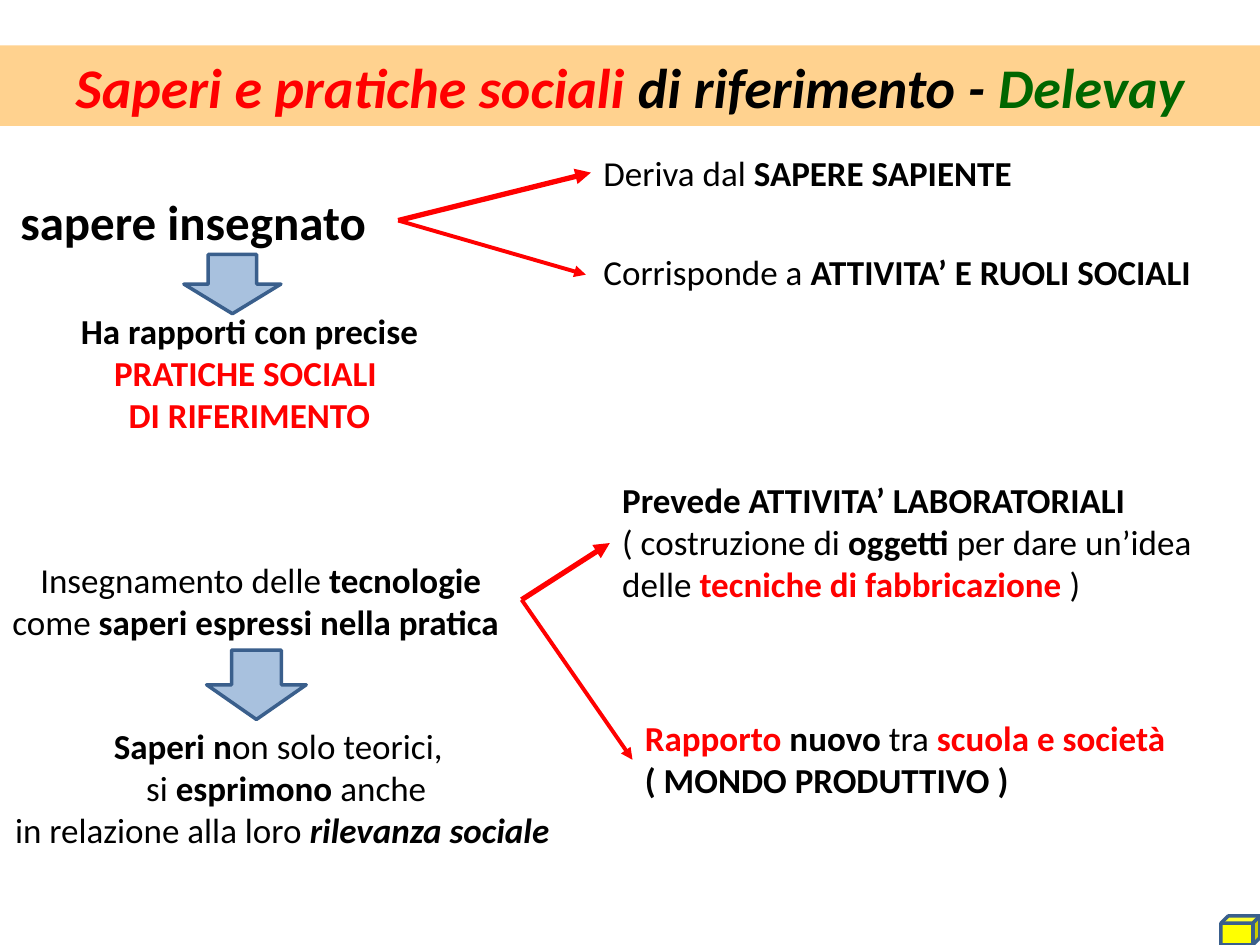
from dataclasses import dataclass

import lxml.etree
import pptx
import pptx.dml.color
import pptx.enum.shapes
import pptx.enum.text
import pptx.oxml.ns
import pptx.util

Inches = pptx.util.Inches
Pt = pptx.util.Pt
Shape = pptx.enum.shapes.MSO_SHAPE
Align = pptx.enum.text.PP_ALIGN
qn = pptx.oxml.ns.qn

FONT = "Calibri"
COLORS = {
    "black": "000000",
    "red": "FF0000",
    "green": "006600",
    "orange": "FF9900",
    "blue": "4F81BD",
    "outline": "3A5F8C",
    "yellow": "FFFF00",
}


@dataclass
class Run:
    text: str
    bold: bool = False
    color: str = "black"
    italic: bool = False
    size: float = 20


@dataclass
class Line:
    runs: list[Run]
    align: Align = Align.LEFT


@dataclass
class TextBlock:
    box: tuple[float, float, float, float]
    lines: list[Line]


@dataclass
class Arrow:
    start: tuple[float, float]
    end: tuple[float, float]
    width: float


def rgb(name: str) -> pptx.dml.color.RGBColor:
    return pptx.dml.color.RGBColor.from_string(COLORS[name])


def centered(*runs: Run) -> Line:
    return Line(list(runs), Align.CENTER)


def left(*runs: Run) -> Line:
    return Line(list(runs))


def write_lines(frame, lines: list[Line], wrap: bool) -> None:
    frame.word_wrap = wrap
    frame.auto_size = pptx.enum.text.MSO_AUTO_SIZE.SHAPE_TO_FIT_TEXT
    for index, line in enumerate(lines):
        paragraph = frame.paragraphs[0] if index == 0 else frame.add_paragraph()
        paragraph.alignment = line.align
        for item in line.runs:
            run = paragraph.add_run()
            run.text = item.text
            run.font.name = FONT
            run.font.size = Pt(item.size)
            run.font.bold = item.bold
            run.font.italic = item.italic
            run.font.color.rgb = rgb(item.color)


def add_text(slide, block: TextBlock) -> None:
    box = slide.shapes.add_textbox(*map(Inches, block.box))
    write_lines(box.text_frame, block.lines, wrap=False)


def add_filled(slide, kind: Shape, box: tuple, fill: str,
               opacity: int = 100, outlined: bool = True):
    shape = slide.shapes.add_shape(kind, *map(Inches, box))
    shape.shadow.inherit = False
    shape.fill.solid()
    shape.fill.fore_color.rgb = rgb(fill)
    if opacity < 100:
        color = shape.fill._xPr.find(qn("a:solidFill"))[0]
        lxml.etree.SubElement(color, qn("a:alpha"), val=str(opacity * 1000))
    if outlined:
        shape.line.color.rgb = rgb("outline")
        shape.line.width = Pt(2)
    else:
        shape.line.fill.background()
    return shape


def add_arrow(slide, arrow: Arrow) -> None:
    connector = slide.shapes.add_connector(
        pptx.enum.shapes.MSO_CONNECTOR.STRAIGHT,
        *map(Inches, arrow.start + arrow.end))
    connector.line.color.rgb = rgb("red")
    connector.line.width = Pt(arrow.width)
    lxml.etree.SubElement(connector.line._get_or_add_ln(), qn("a:tailEnd"), type="triangle")
    lxml.etree.SubElement(connector._element.spPr, qn("a:effectLst"))


TITLE = centered(
    Run("Saperi e pratiche sociali ", True, "red", True, 32),
    Run("di riferimento - ", True, "black", True, 32),
    Run("Delevay", True, "green", True, 32))

TEXT_BLOCKS = [
    # Taught knowledge
    TextBlock((0, 1.47, 3.16, 0.57), [
        left(Run(" "), Run("sapere insegnato", True, size=28))]),
    TextBlock((4.69, 1.15, 3.71, 0.44), [
        left(Run("Deriva dal"), Run(" SAPERE SAPIENTE", True))]),
    TextBlock((4.69, 1.94, 5.11, 0.44), [
        left(Run("Corrisponde a"), Run(" ATTIVITA’ E RUOLI SOCIALI", True))]),
    TextBlock((0.47, 2.41, 3.02, 1.11), [
        centered(Run("Ha rapporti con precise", True)),
        centered(Run("PRATICHE SOCIALI ", True, "red")),
        centered(Run("DI RIFERIMENTO", True, "red"))]),
    # Teaching of technologies
    TextBlock((0, 4.38, 4.14, 0.77), [
        centered(Run("Insegnamento delle "), Run("tecnologie", True)),
        left(Run("come"), Run(" saperi espressi nella pratica", True))]),
    TextBlock((4.84, 3.75, 4.83, 1.11), [
        left(Run("Prevede ATTIVITA’ LABORATORIALI", True)),
        left(Run("( costruzione di "), Run("oggetti", True), Run(" per dare un’idea ")),
        left(Run("delle "), Run("tecniche di fabbricazione ", True, "red"), Run(")"))]),
    TextBlock((5.02, 5.64, 4.37, 0.77), [
        left(Run("Rapporto ", True, "red"), Run("nuovo", True), Run(" tra "),
             Run("scuola e società", True, "red")),
        left(Run("( MONDO PRODUTTIVO )", True))]),
    TextBlock((0, 5.7, 4.48, 1.11), [
        centered(Run("Saperi n", True), Run("on solo teorici, ")),
        centered(Run(" si "), Run("esprimono ", True), Run("anche")),
        centered(Run("in relazione alla loro "),
                 Run("rilevanza sociale", True, italic=True))]),
]

DOWN_ARROWS = [(1.46, 2.02, 0.77, 0.47), (1.64, 5.16, 0.79, 0.55)]

KNOWLEDGE = (3.16, 1.75)
TECHNOLOGY = (4.14, 4.76)
ARROWS = [
    Arrow(KNOWLEDGE, (4.69, 1.37), 3),
    Arrow(KNOWLEDGE, (4.65, 2.18), 2.25),
    Arrow(TECHNOLOGY, (4.84, 4.31), 3),
    Arrow(TECHNOLOGY, (5.02, 6.03), 2.25),
]


def main() -> None:
    presentation = pptx.Presentation()
    presentation.slide_width = Inches(10)
    presentation.slide_height = Inches(7.5)
    slide = presentation.slides.add_slide(presentation.slide_layouts[6])

    # Corner cube and title band
    add_filled(slide, Shape.CUBE, (9.69, 7.27, 0.31, 0.23), "yellow")
    band = add_filled(slide, Shape.RECTANGLE, (0, 0.36, 10, 0.64), "orange", 44, False)
    write_lines(band.text_frame, [TITLE], wrap=True)

    # Diagram
    for box in DOWN_ARROWS:
        add_filled(slide, Shape.DOWN_ARROW, box, "blue", 49)
    for arrow in ARROWS:
        add_arrow(slide, arrow)
    for block in TEXT_BLOCKS:
        add_text(slide, block)

    presentation.save("out.pptx")


if __name__ == "__main__":
    main()
